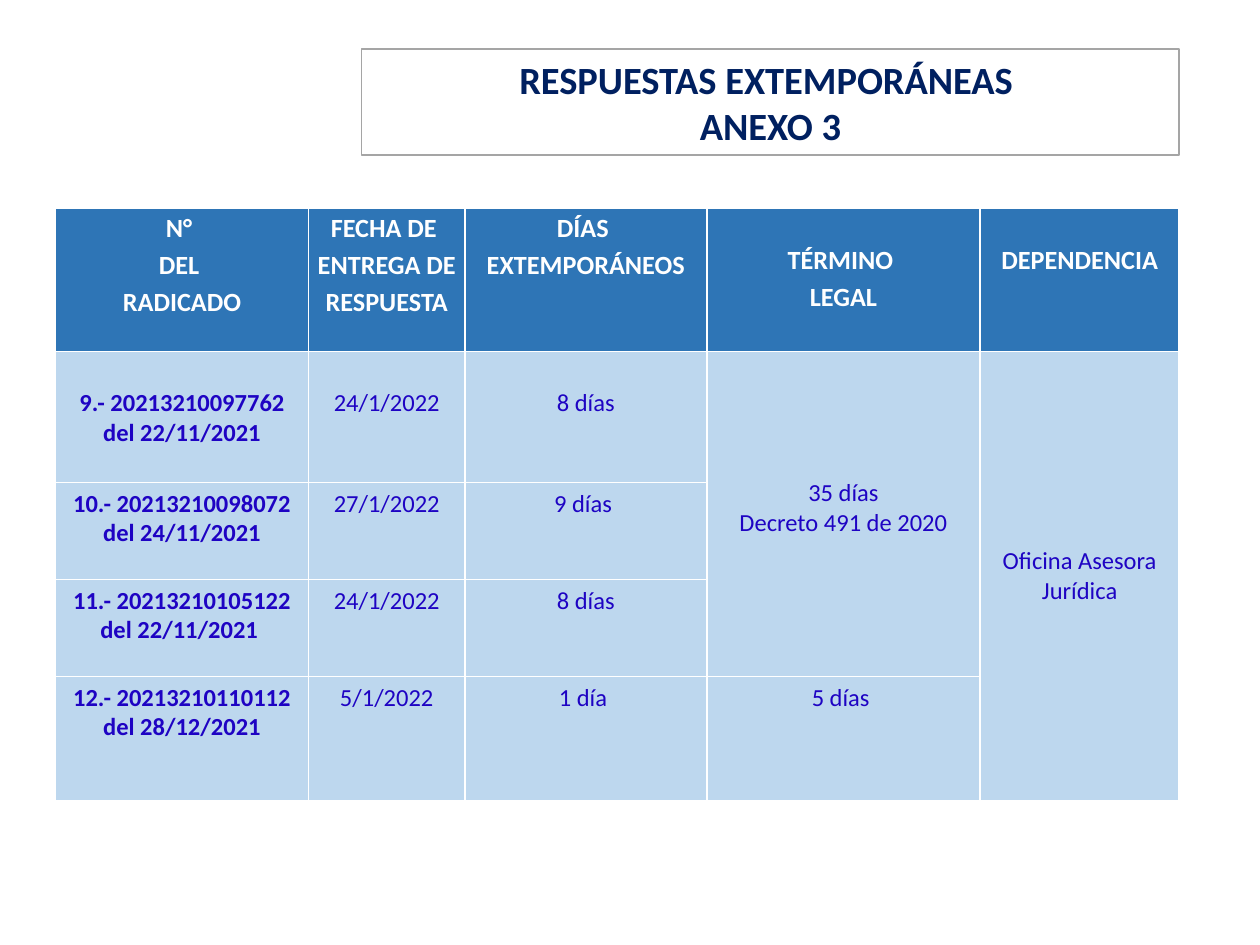
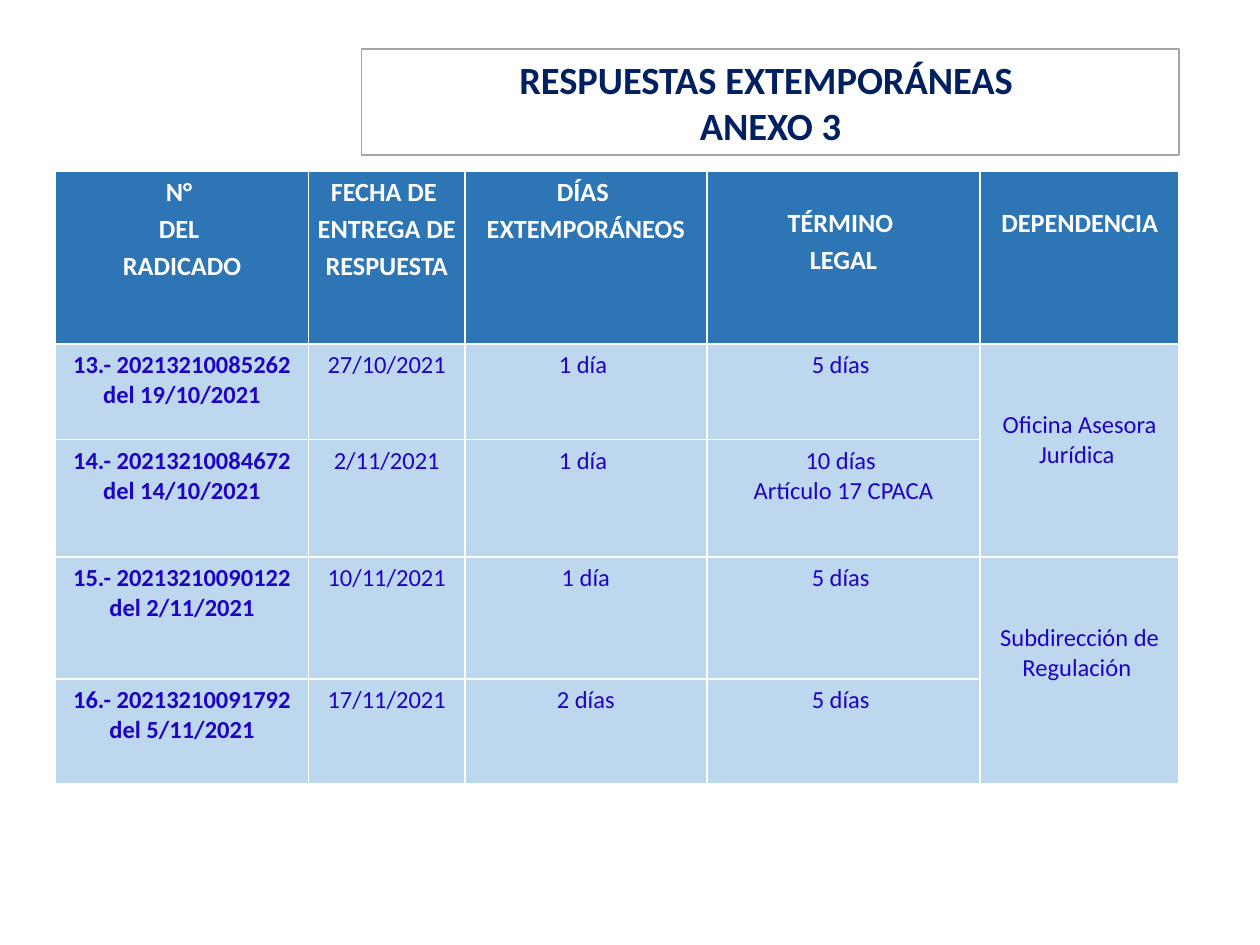
from dataclasses import dataclass

from lxml.etree import SubElement
from pptx import Presentation
from pptx.dml.color import RGBColor
from pptx.enum.text import MSO_ANCHOR, MSO_AUTO_SIZE, PP_ALIGN
from pptx.oxml.ns import qn
from pptx.util import Inches, Pt


@dataclass(frozen=True)
class Theme:
    font: str = "Calibri"
    white: str = "FFFFFF"
    navy: str = "002060"
    gray: str = "A5A5A5"
    blue: str = "2E75B6"
    pale: str = "BDD7EE"
    ink: str = "1E03C3"
    title: int = 22
    head: int = 15
    body: int = 14
    rule: int = 1


TITLE = ["RESPUESTAS EXTEMPORÁNEAS ", "ANEXO 3"]
HEADS = [
    ["N° ", "DEL ", "RADICADO"],
    ["FECHA DE ", "ENTREGA DE ", "RESPUESTA"],
    ["DÍAS ", "EXTEMPORÁNEOS"],
    ["TÉRMINO ", "LEGAL"],
    ["DEPENDENCIA"],
]
COLS = [2.01, 1.24, 1.92, 2.17, 1.58]
LEFT, WIDTH = 0.44, 8.92

# In the rows, None continues the cell above.
LEGAL = ["35 días", "Decreto 491 de 2020"]
OFFICE = ["Oficina Asesora Jurídica"]
FIRST = [
    [["9.- 20213210097762", "del 22/11/2021"], ["24/1/2022"], ["8 días"],
     LEGAL, OFFICE],
    [["10.- 20213210098072", "del 24/11/2021"], ["27/1/2022"], ["9 días "],
     None, None],
    [["11.- 20213210105122", "del 22/11/2021 "], ["24/1/2022"], ["8 días"],
     None, None],
    [["12.- 20213210110112", "del 28/12/2021"], ["5/1/2022"], ["1 día "],
     ["5 días "], None],
]
SECOND = [
    [["13.- 20213210085262", "del 19/10/2021"], ["27/10/2021"], ["1 día "],
     ["5 días "], ["Oficina Asesora Jurídica "]],
    [["14.- 20213210084672", "del 14/10/2021"], ["2/11/2021"], ["1 día "],
     ["10 días ", "Artículo 17 CPACA"], None],
    [["15.- 20213210090122", "del 2/11/2021"], ["10/11/2021"], ["1 día"],
     ["5 días "], ["Subdirección de Regulación "]],
    [["16.- 20213210091792", "del 5/11/2021"], ["17/11/2021"], ["2 días"],
     ["5 días "], None],
]


class Deck:
    def __init__(self, theme):
        self.theme = theme
        self.prs = Presentation()
        self.prs.slide_width, self.prs.slide_height = Inches(10), Inches(7.5)
        self.slide = None

    def page(self):
        self.slide = self.prs.slides.add_slide(self.prs.slide_layouts[5])

    def text(self, frame, lines, size, color, bold, space=1.0):
        for i, line in enumerate(lines):
            par = frame.add_paragraph() if i else frame.paragraphs[0]
            par.alignment = PP_ALIGN.CENTER
            par.line_spacing = space
            run = par.add_run()
            run.text = line
            font = run.font
            font.name, font.size, font.bold = self.theme.font, Pt(size), bold
            font.color.rgb = RGBColor.from_string(color)

    def title(self, lines):
        th = self.theme
        box = self.slide.shapes.title
        box.left, box.top = Inches(2.87), Inches(0.39)
        box.width, box.height = Inches(6.49), Inches(0.84)
        box.fill.solid()
        box.fill.fore_color.rgb = RGBColor.from_string(th.white)
        box.line.color.rgb = RGBColor.from_string(th.gray)
        box.line.width = Pt(th.rule)
        frame = box.text_frame
        frame.auto_size = MSO_AUTO_SIZE.NONE
        frame.word_wrap = True
        frame.vertical_anchor = MSO_ANCHOR.MIDDLE
        self.text(frame, lines, th.title, th.navy, True)

    def paint(self, cell, color):
        """Draw the cell's borders and fill."""
        props = cell._tc.get_or_add_tcPr()
        for side in ("a:lnL", "a:lnR", "a:lnT", "a:lnB"):
            line = SubElement(props, qn(side), w=str(Pt(self.theme.rule)))
            fill = SubElement(line, qn("a:solidFill"))
            SubElement(fill, qn("a:srgbClr"), val=self.theme.white)
        cell.fill.solid()
        cell.fill.fore_color.rgb = RGBColor.from_string(color)

    def head(self, grid):
        th = self.theme
        for col, lines in enumerate(HEADS):
            cell = grid.cell(0, col)
            cell.margin_left = cell.margin_right = Inches(0.07)
            cell.margin_top = Inches(0.25 if col > 2 else 0)
            cell.margin_bottom = 0
            self.text(cell.text_frame, lines, th.head, th.white, True, 1.15)

    def table(self, top, highs, rows, drop=0, lift=None):
        """drop lowers the first row's text; lift raises merged text."""
        th = self.theme
        grid = self.slide.shapes.add_table(
            len(highs), len(COLS), Inches(LEFT), Inches(top),
            Inches(WIDTH), Inches(sum(highs))).table
        grid.first_row = grid.horz_banding = False
        for col, wide in zip(grid.columns, COLS):
            col.width = Inches(wide)
        for i, (row, high) in enumerate(zip(grid.rows, highs)):
            row.height = Inches(high)
            for cell in row.cells:
                self.paint(cell, th.pale if i else th.blue)
        self.head(grid)
        for i, row in enumerate(rows, 1):
            for col, lines in enumerate(row):
                if lines is None:
                    continue
                cell, last = grid.cell(i, col), i
                while last < len(rows) and rows[last][col] is None:
                    last += 1
                if last > i:
                    cell.merge(grid.cell(last, col))
                    cell.vertical_anchor = MSO_ANCHOR.MIDDLE
                    rise = (lift or {}).get((i, col), 0)
                    cell.margin_bottom = Inches(0.05 + rise)
                elif i == 1:
                    cell.margin_top = Inches(0.05 + drop)
                self.text(cell.text_frame, lines, th.body, th.ink, col == 0)


def main():
    deck = Deck(Theme())
    deck.page()
    deck.title(TITLE)
    deck.table(1.65, [1.14, 1.04, 0.77, 0.77, 0.99], FIRST,
               drop=0.24, lift={(1, 3): 0.1})
    deck.page()
    deck.title(TITLE)
    deck.table(1.36, [1.37, 0.76, 0.93, 0.97, 0.83], SECOND,
               lift={(1, 4): 0.17, (3, 4): 0.27})
    deck.prs.save("out.pptx")


if __name__ == "__main__":
    main()
